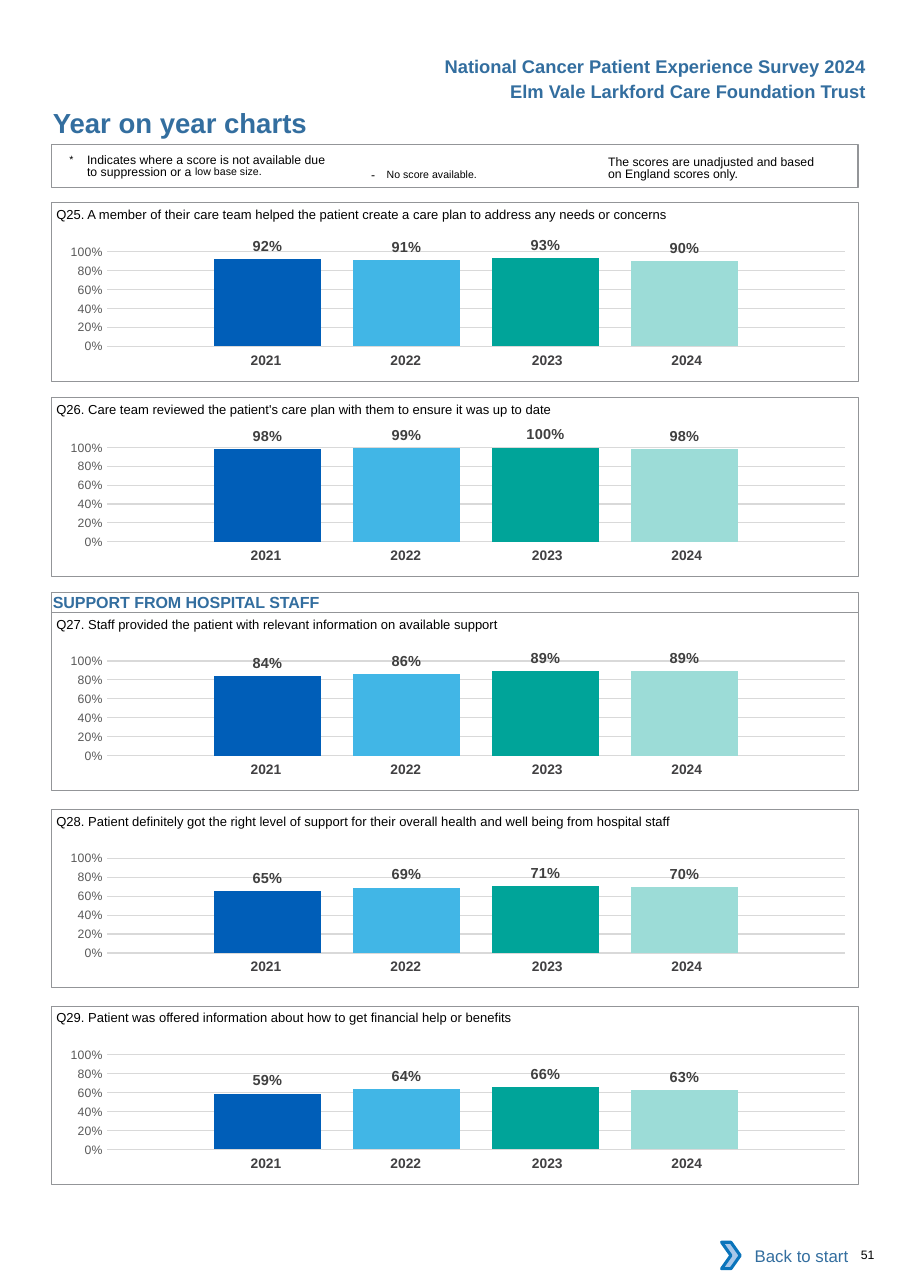
from lxml import etree
from pptx import Presentation
from pptx.chart.data import CategoryChartData
from pptx.dml.color import RGBColor
from pptx.enum.chart import XL_CHART_TYPE, XL_LABEL_POSITION, XL_TICK_MARK
from pptx.enum.shapes import MSO_SHAPE
from pptx.enum.text import MSO_ANCHOR, PP_ALIGN
from pptx.oxml import parse_xml
from pptx.util import Pt

COLUMN = XL_CHART_TYPE.COLUMN_CLUSTERED
OUTSIDE = XL_LABEL_POSITION.OUTSIDE_END
NO_TICK = XL_TICK_MARK.NONE
RECT, CHEVRON = MSO_SHAPE.RECTANGLE, MSO_SHAPE.CHEVRON
TOP, MIDDLE = MSO_ANCHOR.TOP, MSO_ANCHOR.MIDDLE
LEFT, CENTER, RIGHT = PP_ALIGN.LEFT, PP_ALIGN.CENTER, PP_ALIGN.RIGHT

COLORS = {
    "blue": "336E9F", "black": "000000", "white": "FFFFFF",
    "frame": "939598", "year": "414042", "label": "404040",
    "axis": "595959", "grid": "D9D9D9", "arrow": "A8C7E9", "edge": "0A74BB",
}
BARS = ["005EB8", "41B6E6", "00A499", "9CDCD7"]
YEARS = ["2021", "2022", "2023", "2024"]
YEAR_COLS = [91.4, 91.4, 96.5, 91.4]
YEAR_PADS = [0, 0, 2.9, 8.6]
NO_STYLE = "{2D5ABB26-0587-4C30-8999-92F81FD0307C}"
PLOT = {"x": 0.079, "y": 0.145, "w": 0.915, "h": 0.666}
CHART_NS = "http://schemas.openxmlformats.org/drawingml/2006/chart"

EDGE, WIDTH, HEIGHT = 33.8, 527, 116.6
QUESTIONS = [
    (132.5, "Q25. A member of their care team helped the patient create a care plan "
     "to address any needs or concerns", [0.92, 0.91, 0.93, 0.9]),
    (260, "Q26. Care team reviewed the patient's care plan with them to ensure it "
     "was up to date", [0.98, 0.99, 1, 0.98]),
    (400, "Q27. Staff provided the patient with relevant information on available "
     "support", [0.84, 0.86, 0.89, 0.89]),
    (529, "Q28. Patient definitely got the right level of support for their overall "
     "health and well being from hospital staff", [0.65, 0.69, 0.71, 0.7]),
    (657.4, "Q29. Patient was offered information about how to get financial help or "
     "benefits", [0.59, 0.64, 0.66, 0.63]),
]


def rgb(name):
    return RGBColor.from_string(COLORS.get(name, name))


def style(font, size, color, bold=False):
    font.name, font.size, font.bold = "Arial", Pt(size), bold
    font.color.rgb = rgb(color)


def pad(frame, left=0, top=0, right=0, bottom=0):
    frame.margin_left, frame.margin_top = Pt(left), Pt(top)
    frame.margin_right, frame.margin_bottom = Pt(right), Pt(bottom)


def write(frame, text, size, color="black", bold=False, align=LEFT):
    frame.word_wrap = True
    para = frame.paragraphs[0]
    para.text, para.alignment = text, align
    style(para.font, size, color, bold)
    return para


def label(slide, box, text, size, color="black", bold=False, align=LEFT):
    frame = slide.shapes.add_textbox(*map(Pt, box)).text_frame
    pad(frame)
    return write(frame, text, size, color, bold, align)


def add_run(para, text, size=None, **attrs):
    """Add a run; attrs are raw settings such as baseline or spc."""
    run = para.add_run()
    run.text = text
    if size:
        run.font.size = Pt(size)
    for name, value in attrs.items():
        run.font._element.set(name, str(value))


def draw(slide, kind, box, fill=None, line=None, weight=0.5):
    shape = slide.shapes.add_shape(kind, *map(Pt, box))
    shape.shadow.inherit = False
    if fill:
        shape.fill.solid()
        shape.fill.fore_color.rgb = rgb(fill)
    else:
        shape.fill.background()
    if line:
        shape.line.color.rgb = rgb(line)
        shape.line.width = Pt(weight)
    else:
        shape.line.fill.background()
    return shape


def add_head(slide):
    lines = ["National Cancer Patient Experience Survey 2024",
             "Elm Vale Larkford Care Foundation Trust"]
    for row, text in enumerate(lines):
        label(slide, (265, 36.2 + 16 * row, 301, 14), text, 12, "blue", True, RIGHT)
    title = slide.shapes.title
    title.left, title.top, title.width, title.height = map(Pt, (EDGE, 69.1, 324, 21.6))
    title.text_frame.vertical_anchor = TOP
    pad(title.text_frame, left=0.7)
    write(title.text_frame, "Year on year charts", 18, "blue", True)


def add_key(slide, left, top):
    star = label(slide, (left + 11.6, top + 7.3, 171, 17), "", 8)
    star.line_spacing = Pt(8.1)
    props = star._p.get_or_add_pPr()
    props.set("marL", str(Pt(11.5)))
    props.set("indent", str(-Pt(11.5)))
    add_run(star, "*\t", 12, baseline=3000)
    add_run(star, "Indicates where a score is not available due to suppression or a ")
    add_run(star, "low base size.", 12, baseline=7000)

    dash = label(slide, (left + 208.8, top + 11, 120, 14), "", 8)
    add_run(dash, "- ", spc=260)
    add_run(dash, "No score available.", 12, baseline=3000)

    note = label(slide, (left + 363.6, top + 8, 141, 17),
                 "The scores are unadjusted and based on England scores only.", 8)
    note.line_spacing = Pt(8.1)
    draw(slide, RECT, (left, top, WIDTH, 28.1), line="frame", weight=0.75)


def add_years(slide, left, top):
    frame = slide.shapes.add_table(1, len(YEARS), Pt(left), Pt(top),
                                   Pt(sum(YEAR_COLS)), Pt(19.4))
    table = frame.table
    table.first_row = table.horz_banding = False
    table._tbl.tblPr[0].text = NO_STYLE
    for col, (year, width, right) in enumerate(zip(YEARS, YEAR_COLS, YEAR_PADS)):
        table.columns[col].width = Pt(width)
        cell = table.cell(0, col)
        cell.fill.background()
        pad(cell, 7.2, 3.6, right, 3.6)
        write(cell.text_frame, year, 9, "year", True, CENTER)


def add_bars(slide, box, scores):
    data = CategoryChartData(number_format="0%")
    data.categories = ["1"]
    for num, score in enumerate(scores, 1):
        data.add_series(f"Series {num}", [score])
    chart = slide.shapes.add_chart(COLUMN, *map(Pt, box), data).chart
    chart.has_title = chart.has_legend = False
    chart.font.name, chart.font.size = "Calibri", Pt(10)
    chart.font.color.rgb = rgb("black")
    chart.category_axis.visible = False

    axis = chart.value_axis
    axis.minimum_scale, axis.maximum_scale, axis.major_unit = 0, 1, 0.2
    axis.major_tick_mark = axis.minor_tick_mark = NO_TICK
    axis.format.line.fill.background()
    grid = axis.major_gridlines.format.line
    grid.color.rgb, grid.width = rgb("grid"), Pt(0.75)
    axis.tick_labels.number_format = "0%"
    axis.tick_labels.number_format_is_linked = False
    style(axis.tick_labels.font, 8, "axis")

    plot = chart.plots[0]
    plot.gap_width, plot.overlap, plot.vary_by_categories = 200, -30, False
    for series, color in zip(plot.series, BARS):
        series.format.fill.solid()
        series.format.fill.fore_color.rgb = rgb(color)
        marks = series.data_labels
        marks.show_value, marks.position = True, OUTSIDE
        marks.number_format, marks.number_format_is_linked = "0%", False
        style(marks.font, 9.5, "label", True)

    area = chart._chartSpace.chart.plotArea
    for old in area.findall(f"{{{CHART_NS}}}layout"):
        area.remove(old)
    layout = parse_xml(f'<c:layout xmlns:c="{CHART_NS}"><c:manualLayout>'
                       '<c:layoutTarget val="inner"/><c:xMode val="edge"/>'
                       '<c:yMode val="edge"/></c:manualLayout></c:layout>')
    for name, value in PLOT.items():
        etree.SubElement(layout[0], f"{{{CHART_NS}}}{name}").set("val", str(value))
    area.insert(0, layout)


def add_panel(slide, left, top, text, scores):
    add_years(slide, left + 90.7, top + 94.3)
    add_bars(slide, (left - 5.4, top + 18.5, WIDTH, 92.9), scores)
    draw(slide, RECT, (left, top, WIDTH, HEIGHT), line="frame")
    label(slide, (left + 3, top + 2.6, WIDTH - 6, 10), text, 8.5)


def add_band(slide, left, top):
    band = draw(slide, RECT, (left, top, WIDTH, 13), line="frame")
    pad(band.text_frame, left=0.7)
    band.text_frame.vertical_anchor = MIDDLE
    write(band.text_frame, "SUPPORT FROM HOSPITAL STAFF", 10.5, "blue", True)


def add_foot(slide, left, top):
    back = draw(slide, RECT, (left + 5, top, 85, 30.2), "white")
    back.text_frame.vertical_anchor = MIDDLE
    pad(back.text_frame, 7.2, 3.6, 7.2, 3.6)
    write(back.text_frame, "Back to start", 11, "blue", align=RIGHT)
    draw(slide, CHEVRON, (left, top + 6.5, 12.2, 17.3), "arrow", "edge", 2)
    label(slide, (left + 91, top + 10, 30, 9.4), "51", 8)


def main():
    deck = Presentation()
    deck.slide_width, deck.slide_height = Pt(594.7), Pt(841.7)
    slide = deck.slides.add_slide(deck.slide_layouts[5])
    add_head(slide)
    add_key(slide, EDGE, 94.3)
    for top, text, scores in QUESTIONS:
        add_panel(slide, EDGE, top, text, scores)
    add_band(slide, EDGE, 387)
    add_foot(slide, 471.6, 805.3)
    deck.save("out.pptx")


if __name__ == "__main__":
    main()
